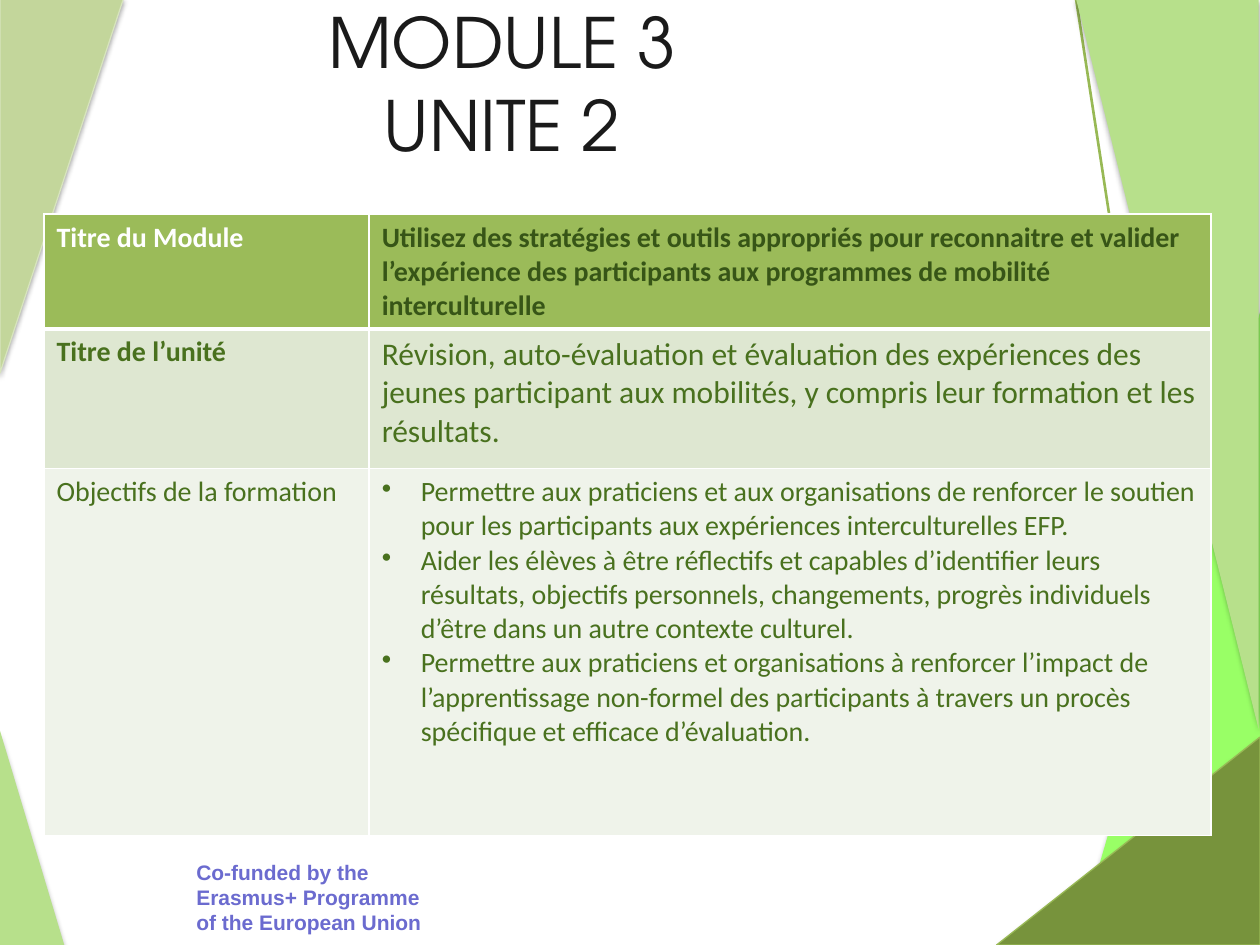
"""Build the title slide of module 3, unit 2."""
from lxml.etree import SubElement
from pptx import Presentation
from pptx.dml.color import RGBColor
from pptx.enum.shapes import MSO_CONNECTOR, MSO_SHAPE
from pptx.enum.text import MSO_ANCHOR, PP_ALIGN
from pptx.oxml import parse_xml
from pptx.oxml.ns import nsdecls, qn
from pptx.util import Pt

PX = 9144
GREEN = "49711E"


def paint(part, color):
    if hasattr(part, "solid"):
        part.solid()
        part = part.fore_color
    part.rgb = RGBColor.from_string(color)


def write(frame, text, size=16, font="Calibri", color=GREEN, bold=False,
          align=PP_ALIGN.LEFT, bullet=False):
    frame.word_wrap = True
    for i, line in enumerate(text.split("\n")):
        para = frame.add_paragraph() if i else frame.paragraphs[0]
        para.text = line
        para.alignment = align
        if bullet:
            props = para._p.get_or_add_pPr()
            props.set("marL", str(31 * PX))
            props.set("indent", str(-31 * PX))
            SubElement(props, qn("a:buChar"), char="•")
        for run in para.runs:
            run.font.size = Pt(size)
            run.font.name = font
            run.font.bold = bold
            paint(run.font.fill, color)


deck = Presentation()
deck.slide_width, deck.slide_height = 1000 * PX, 750 * PX
slide = deck.slides.add_slide(deck.slide_layouts[6])
shapes = slide.shapes

wedges = [
    (854, 241, 148, 509, "h", "99FF66", None),
    (0, 580, 51, 170, "", "B7E08B", None),
    (0, -1, 98, 297, "v", "C3D69B", "D7E4BD"),
    (854, -1, 145, 580, "hv", "B7E08B", None),
    (791, 585, 209, 165, "h", "77933C", "98B955"),
]
rays = [(896, 750, 930, 210), (965, 721, 854, -1)]

for i, (x, y, w, h, flip, color, edge) in enumerate(wedges):
    if i == 3:
        for ray in rays:
            line = shapes.add_connector(MSO_CONNECTOR.STRAIGHT, *(v * PX for v in ray))
            paint(line.line.fill, "98B955")
            line.line.width = Pt(1.5)
            SubElement(line._element.spPr, qn("a:effectLst"))
    wedge = shapes.add_shape(MSO_SHAPE.RIGHT_TRIANGLE, x * PX, y * PX, w * PX, h * PX)
    for axis in flip:
        wedge._element.spPr.xfrm.set("flip" + axis.upper(), "1")
    paint(wedge.fill, color)
    if edge:
        paint(wedge.line.fill, edge)
        wedge.line.width = Pt(0.75)
    else:
        wedge.line.fill.background()
    wedge.shadow.inherit = False
    glow = wedge._element.spPr.find(qn("a:effectLst"))
    glow.append(parse_xml(
        f'<a:outerShdw {nsdecls("a")} blurRad="{Pt(3.1)}" dist="{Pt(1.8)}" '
        'dir="5400000" rotWithShape="0"><a:srgbClr val="000000">'
        '<a:alpha val="35000"/></a:srgbClr></a:outerShdw>'))

credit = shapes.add_textbox(146 * PX, 677 * PX, 200 * PX, 71 * PX)
write(credit.text_frame, "Co-funded by the Erasmus+ Programme of the European Union",
      size=12, font="Arial", color="6B6BCF", bold=True)

title = shapes.add_textbox(75 * PX, 3 * PX, 647 * PX, 125 * PX)
title.text_frame.vertical_anchor = MSO_ANCHOR.MIDDLE
write(title.text_frame, "MODULE 3\vUNITE 2", size=39.6, font="TeX Gyre Adventor",
      color="1A1A1A", align=PP_ALIGN.CENTER)

goals = "\n".join([
    "Permettre aux praticiens et aux organisations de renforcer le soutien pour les "
    "participants aux expériences interculturelles EFP.",
    "Aider les élèves à être réflectifs et capables d’identifier leurs résultats, objectifs "
    "personnels, changements, progrès individuels d’être dans un autre contexte culturel.",
    "Permettre aux praticiens et organisations à renforcer l’impact de l’apprentissage "
    "non-formel des participants à travers un procès spécifique et efficace d’évaluation.",
])
rows = [
    (91, "9BBB59",
     ("Titre du Module", dict(color="FFFFFF", bold=True)),
     ("Utilisez des stratégies et outils appropriés pour reconnaitre et valider "
      "l’expérience des participants aux programmes de mobilité interculturelle",
      dict(color="375517", bold=True))),
    (111, "DEE7D1",
     ("Titre de l’unité", dict(bold=True)),
     ("Révision, auto-évaluation et évaluation des expériences des jeunes participant "
      "aux mobilités, y compris leur formation et les résultats.", dict(size=18))),
    (291, "EFF3EA",
     ("Objectifs de la formation", {}),
     (goals, dict(bullet=True))),
]
table = shapes.add_table(3, 2, 35 * PX, 170 * PX, 926 * PX, 493 * PX).table
table.columns[0].width, table.columns[1].width = 258 * PX, 668 * PX
for r, (height, color, *cells) in enumerate(rows):
    table.rows[r].height = height * PX
    for c, (text, style) in enumerate(cells):
        cell = table.cell(r, c)
        write(cell.text_frame, text, **style)
        props = cell._tc.get_or_add_tcPr()
        for side in "LRTB":
            thick = 3 if (r, side) in [(0, "B"), (1, "T")] else 1
            props.append(parse_xml(
                f'<a:ln{side} {nsdecls("a")} w="{Pt(thick)}"><a:solidFill>'
                f'<a:srgbClr val="FFFFFF"/></a:solidFill></a:ln{side}>'))
        paint(cell.fill, color)

deck.save("out.pptx")
